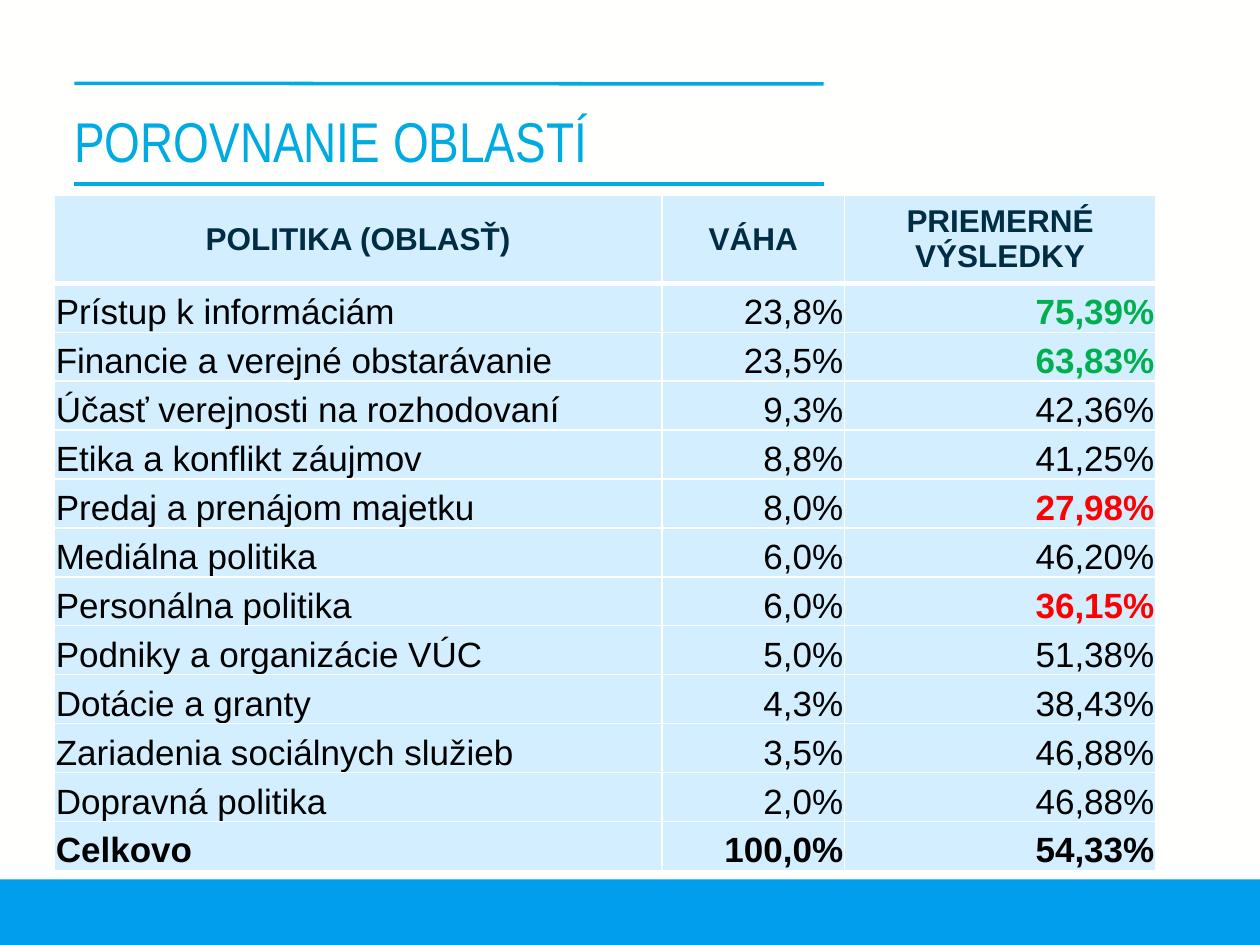
from dataclasses import dataclass

from lxml.etree import SubElement
from pptx import Presentation
from pptx.dml.color import RGBColor
from pptx.enum.shapes import MSO_CONNECTOR, MSO_SHAPE
from pptx.enum.text import MSO_ANCHOR, PP_ALIGN
from pptx.oxml.ns import qn
from pptx.util import Pt


@dataclass(frozen=True)
class Theme:
    background: str = "FFFFFE"
    accent: str = "00ABE2"
    band: str = "009FEE"
    cell: str = "D3EFFF"
    header: str = "002C44"
    body: str = "000000"
    good: str = "00B050"
    bad: str = "FF0000"
    title_font: str = "Arial Narrow"
    body_font: str = "Arial"
    title_size: int = 32
    header_size: int = 18
    body_size: int = 20


def add_color(parent, color):
    fill = SubElement(parent, qn("a:solidFill"))
    return SubElement(fill, qn("a:srgbClr"), val=color)


class SlideBuilder:
    def __init__(self, slide, theme):
        self.slide = slide
        self.theme = theme
        fill = slide.background.fill
        fill.solid()
        fill.fore_color.rgb = RGBColor.from_string(theme.background)

    def add_text(self, paragraph, text, font, size, color, bold=False):
        run = paragraph.add_run()
        run.text = text
        run.font.name = font
        run.font.size = Pt(size)
        run.font.bold = bold
        run.font.color.rgb = RGBColor.from_string(color)

    def band(self, left, top, width, height):
        shape = self.slide.shapes.add_shape(
            MSO_SHAPE.RECTANGLE, Pt(left), Pt(top), Pt(width), Pt(height))
        shape.fill.solid()
        shape.fill.fore_color.rgb = RGBColor.from_string(self.theme.band)
        shape.line.fill.background()
        shape.shadow.inherit = False
        effects = shape._element.spPr.find(qn("a:effectLst"))
        shadow = SubElement(effects, qn("a:outerShdw"), blurRad=str(Pt(3.1)),
                            dist=str(Pt(1.8)), dir="5400000", rotWithShape="0")
        color = SubElement(shadow, qn("a:srgbClr"), val="000000")
        SubElement(color, qn("a:alpha"), val="35000")

    def rule(self, left, top, right, bottom):
        line = self.slide.shapes.add_connector(
            MSO_CONNECTOR.STRAIGHT, Pt(left), Pt(top), Pt(right), Pt(bottom))
        line.line.color.rgb = RGBColor.from_string(self.theme.accent)
        line.line.width = Pt(2)
        SubElement(line._element.spPr, qn("a:effectLst"))

    def title(self, text, left, top, width, height):
        box = self.slide.shapes.add_textbox(Pt(left), Pt(top), Pt(width), Pt(height))
        frame = box.text_frame
        frame.word_wrap = True
        frame.vertical_anchor = MSO_ANCHOR.MIDDLE
        frame.margin_left = frame.margin_right = Pt(0)
        frame.margin_top = frame.margin_bottom = Pt(0)
        theme = self.theme
        self.add_text(frame.paragraphs[0], text, theme.title_font, theme.title_size, theme.accent)

    def borders(self, cell, top, bottom):
        properties = cell._tc.get_or_add_tcPr()
        for side, width in (("L", 1), ("R", 1), ("T", top), ("B", bottom)):
            line = SubElement(properties, qn(f"a:ln{side}"), w=str(Pt(width)))
            add_color(line, self.theme.background)

    def cell(self, cell, text, size, color, bold, alignment, top=1, bottom=1):
        self.borders(cell, top, bottom)
        cell.fill.solid()
        cell.fill.fore_color.rgb = RGBColor.from_string(self.theme.cell)
        paragraph = cell.text_frame.paragraphs[0]
        paragraph.alignment = alignment
        self.add_text(paragraph, text, self.theme.body_font, size, color, bold)

    def table(self, headers, rows, left, top, widths, header_height, row_height):
        theme = self.theme
        height = header_height + row_height * len(rows)
        table = self.slide.shapes.add_table(
            len(rows) + 1, len(widths), Pt(left), Pt(top), Pt(sum(widths)), Pt(height)).table
        for column, width in zip(table.columns, widths):
            column.width = Pt(width)
        for index, row in enumerate(table.rows):
            row.height = Pt(row_height if index else header_height)
        for column, text in enumerate(headers):
            cell = table.cell(0, column)
            self.cell(cell, text, theme.header_size, theme.header, True,
                      PP_ALIGN.CENTER, bottom=3)
            cell.vertical_anchor = MSO_ANCHOR.MIDDLE
        for index, (area, weight, result, color) in enumerate(rows, 1):
            total = index == len(rows)
            for column, text in enumerate((area, weight, result)):
                cell = table.cell(index, column)
                text_color = color if column == 2 else theme.body
                self.cell(cell, text, theme.body_size, text_color,
                          total or text_color != theme.body,
                          PP_ALIGN.RIGHT if column else PP_ALIGN.LEFT,
                          top=3 if index == 1 else 1)
                cell.vertical_anchor = MSO_ANCHOR.BOTTOM
                cell.margin_left = cell.margin_right = cell.margin_top = Pt(0.7)
                cell.margin_bottom = Pt(0)


def main():
    theme = Theme()
    presentation = Presentation()
    presentation.slide_width = Pt(720)
    presentation.slide_height = Pt(540)
    builder = SlideBuilder(presentation.slides.add_slide(presentation.slide_layouts[6]), theme)

    builder.band(0, 502.5, 720, 37.5)
    builder.rule(42.5, 47.6, 470.6, 48)
    builder.rule(42.5, 105, 470.6, 105)
    builder.title("POROVNANIE OBLASTÍ", 42.5, 49, 499, 62.6)

    headers = ("POLITIKA (OBLASŤ)", "VÁHA", "PRIEMERNÉ VÝSLEDKY")
    results = [
        ("Prístup k informáciám", "23,8%", "75,39%", theme.good),
        ("Financie a verejné obstarávanie", "23,5%", "63,83%", theme.good),
        ("Účasť verejnosti na rozhodovaní", "9,3%", "42,36%", theme.body),
        ("Etika a konflikt záujmov", "8,8%", "41,25%", theme.body),
        ("Predaj a prenájom majetku", "8,0%", "27,98%", theme.bad),
        ("Mediálna politika", "6,0%", "46,20%", theme.body),
        ("Personálna politika", "6,0%", "36,15%", theme.bad),
        ("Podniky a organizácie VÚC", "5,0%", "51,38%", theme.body),
        ("Dotácie a granty", "4,3%", "38,43%", theme.body),
        ("Zariadenia sociálnych služieb", "3,5%", "46,88%", theme.body),
        ("Dopravná politika", "2,0%", "46,88%", theme.body),
        ("Celkovo", "100,0%", "54,33%", theme.body),
    ]
    builder.table(headers, results, 31.2, 111.5, (347, 104.4, 177.8), 50.4, 27.95)
    presentation.save("out.pptx")


if __name__ == "__main__":
    main()
